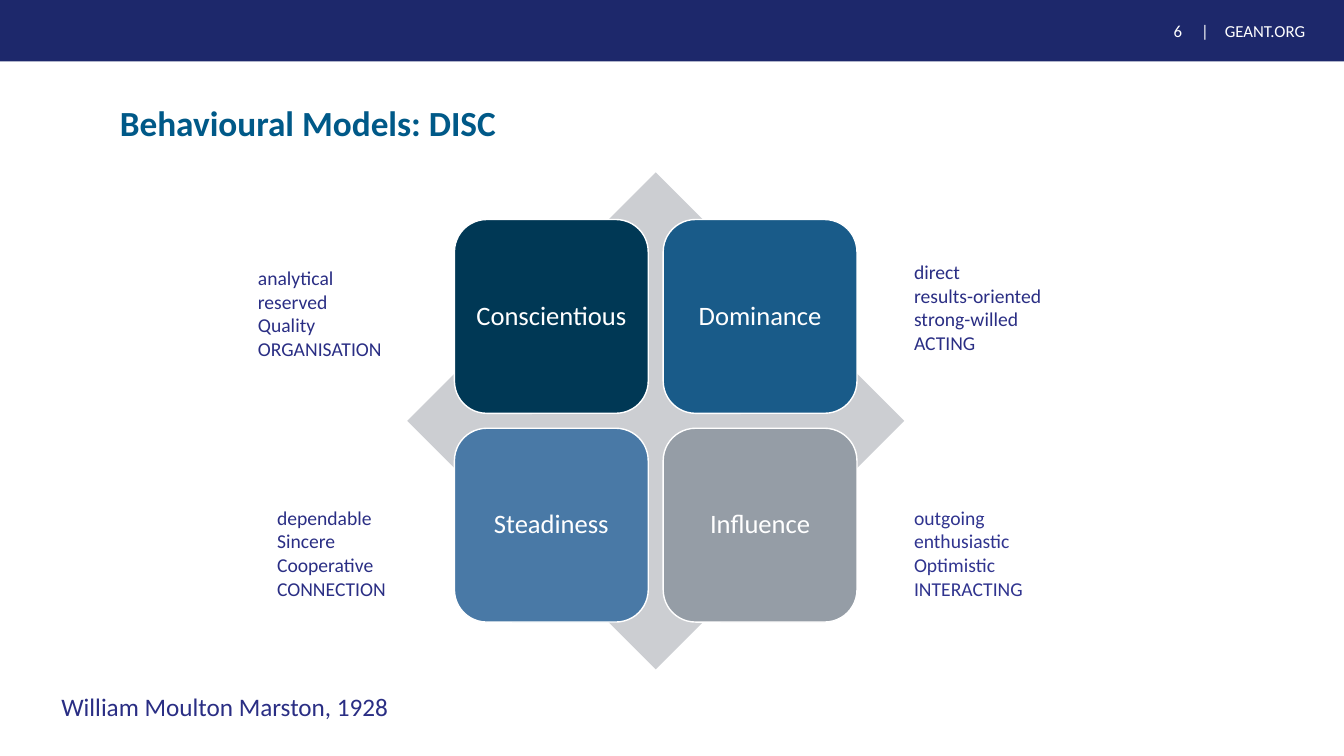
from pptx import Presentation
from pptx.dml.color import RGBColor
from pptx.enum.shapes import MSO_SHAPE
from pptx.enum.text import MSO_ANCHOR, PP_ALIGN
from pptx.util import Pt

RECTANGLE, DIAMOND = MSO_SHAPE.RECTANGLE, MSO_SHAPE.DIAMOND
ROUNDED = MSO_SHAPE.ROUNDED_RECTANGLE
TOP, MIDDLE = MSO_ANCHOR.TOP, MSO_ANCHOR.MIDDLE
LEFT, CENTER, RIGHT = PP_ALIGN.LEFT, PP_ALIGN.CENTER, PP_ALIGN.RIGHT

WHITE = RGBColor(0xFF, 0xFF, 0xFF)
BANNER = RGBColor(0x1D, 0x28, 0x6B)
TITLE = RGBColor(0x00, 0x59, 0x88)
INDIGO = RGBColor(0x2A, 0x2E, 0x84)
LIGHT_INDIGO = RGBColor(0x30, 0x34, 0x8F)
SILVER = RGBColor(0xCC, 0xCE, 0xD2)
NAVY = RGBColor(0x00, 0x38, 0x55)
BLUE = RGBColor(0x19, 0x5B, 0x89)
STEEL = RGBColor(0x49, 0x79, 0xA6)
GREY = RGBColor(0x95, 0x9D, 0xA6)

STYLES = ((NAVY, "Conscientious"), (BLUE, "Dominance"),
          (STEEL, "Steadiness"), (GREY, "Influence"))
TRAITS = (
    (177.1, 186.5, INDIGO, ("analytical", "reserved", "Quality", "ORGANISATION")),
    (645.8, 182.2, INDIGO, ("direct", "results-oriented", "strong-willed", "ACTING")),
    (190.8, 357.8, INDIGO, ("dependable", "Sincere", "Cooperative", "CONNECTION")),
    (645.8, 357.8, LIGHT_INDIGO, ("outgoing", "enthusiastic", "Optimistic", "INTERACTING")),
)


def write(shape, lines, size, color, align=LEFT, anchor=TOP, spacing=1.0, bold=False):
    frame = shape.text_frame
    frame.word_wrap = True
    frame.vertical_anchor = anchor
    for index, line in enumerate(lines):
        para = frame.add_paragraph() if index else frame.paragraphs[0]
        para.alignment = align
        para.line_spacing = spacing
        span = para.add_run()
        span.text = line
        font_values = {"name": "Calibri", "size": Pt(size), "bold": bold}
        for name, value in font_values.items():
            setattr(span.font, name, value)
        span.font.color.rgb = color


def add_text(page, box, lines, size, color, **layout):
    shape = page.shapes.add_textbox(*map(Pt, box))
    write(shape, lines, size, color, **layout)


def add_filled(page, kind, box, fill):
    shape = page.shapes.add_shape(kind, *map(Pt, box))
    shape.shadow.inherit = False
    shape.fill.solid()
    shape.fill.fore_color.rgb = fill
    shape.line.fill.background()
    return shape


def add_banner(page, box):
    """Draw the top band with page number, divider and site at its right."""
    left, top, width, height = box
    add_filled(page, RECTANGLE, box, BANNER)
    right = left + width
    for offset, text, align in ((158.6, "6", RIGHT), (139.5, "|", RIGHT),
                                (92.2, "GEANT.ORG", LEFT)):
        text_width = 50 if align == RIGHT else 100
        add_text(page, (right - offset, top, text_width, height), [text],
                 12, WHITE, align=align, anchor=MIDDLE)


def add_disc_matrix(page, left, top, side):
    """Draw four tiles in a two by two grid over a diamond."""
    add_filled(page, DIAMOND, (left, top, side, side), SILVER)
    tile, inset, step = side * 0.39, side * 0.095, side * 0.42
    for index, (fill, name) in enumerate(STYLES):
        row, column = divmod(index, 2)
        box = (left + inset + column * step, top + inset + row * step, tile, tile)
        shape = add_filled(page, ROUNDED, box, fill)
        shape.line.color.rgb = WHITE
        shape.line.width = Pt(1)
        for margin in ("left", "top", "right", "bottom"):
            setattr(shape.text_frame, f"margin_{margin}", Pt(5.7))
        write(shape, [name], 19, WHITE, align=CENTER, anchor=MIDDLE, spacing=0.9)


def add_traits(page):
    for left, top, color, words in TRAITS:
        add_text(page, (left, top, 123, 75), words, 14, color)


def main():
    deck = Presentation()
    deck.slide_width, deck.slide_height = Pt(960), Pt(540)
    page = deck.slides.add_slide(deck.slide_layouts[6])
    add_banner(page, (0, 0, 960, 43.8))
    add_text(page, (78.5, 72, 779, 34), ["Behavioural Models: DISC"], 25.2, TITLE,
             anchor=MIDDLE, spacing=0.9, bold=True)
    add_disc_matrix(page, 290.9, 123.1, 355)
    add_traits(page)
    add_text(page, (36.7, 490.3, 251, 29), ["William Moulton Marston, 1928"], 18, INDIGO)
    deck.save("out.pptx")


if __name__ == "__main__":
    main()
